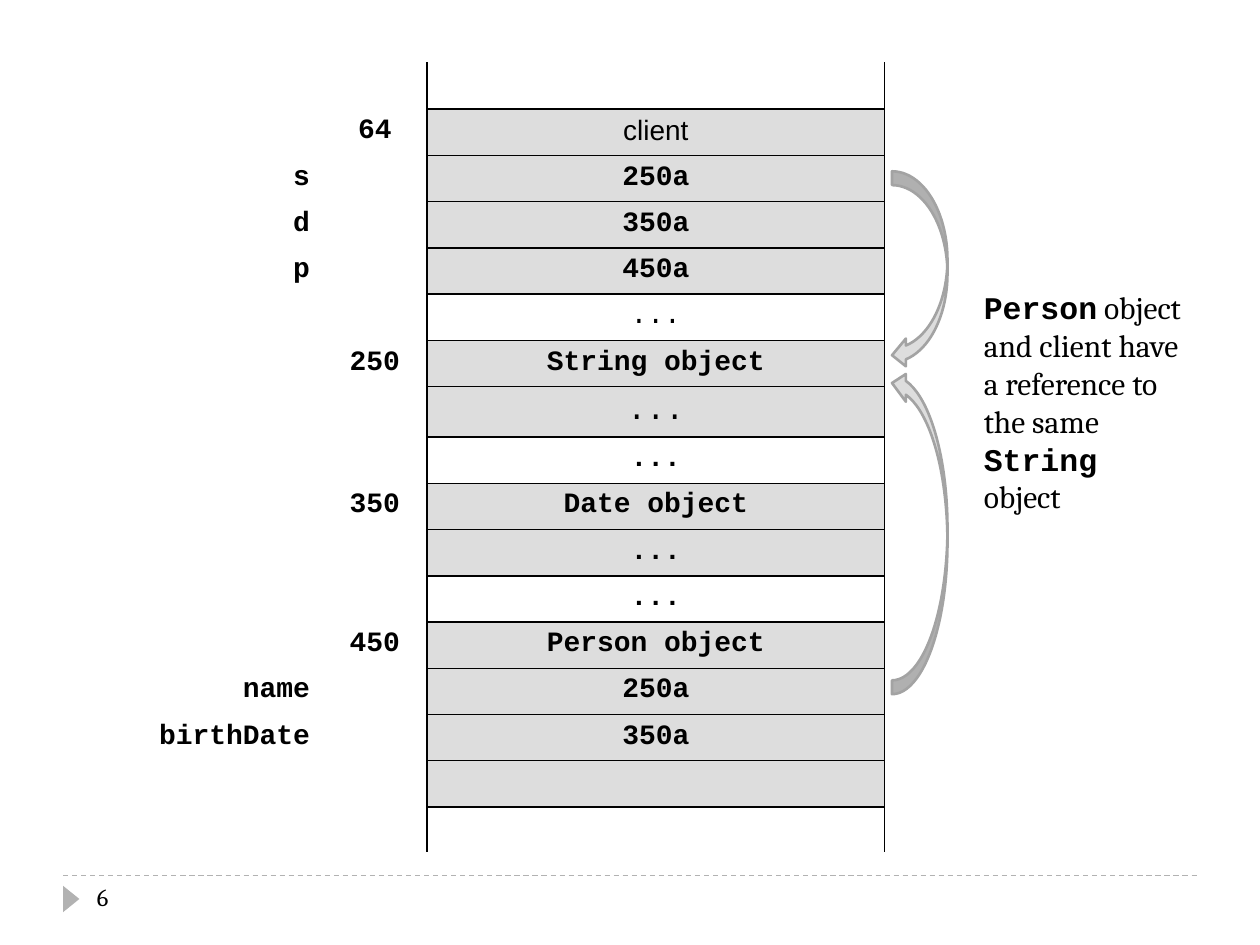
from pptx import Presentation
from pptx.dml.color import RGBColor
from pptx.enum.dml import MSO_LINE
from pptx.enum.shapes import MSO_CONNECTOR, MSO_SHAPE
from pptx.enum.text import MSO_AUTO_SIZE, PP_ALIGN
from pptx.oxml.ns import qn
from pptx.util import Inches, Pt
from lxml import etree

LEFT, MID, RIGHT = PP_ALIGN.LEFT, PP_ALIGN.CENTER, PP_ALIGN.RIGHT
DASH = MSO_LINE.DASH
GROW = MSO_AUTO_SIZE.SHAPE_TO_FIT_TEXT
STRAIGHT = MSO_CONNECTOR.STRAIGHT
TIP = MSO_SHAPE.ISOSCELES_TRIANGLE
CURVE = MSO_SHAPE.CURVED_LEFT_ARROW

HUES = {"ink": "000000", "cell": "DDDDDD", "edge": "A3A3A3", "rule": "B2B2B2"}
CODE, BODY, SANS = "Courier New", "Cambria", "Arial"
COLS = (2.28, 0.83, 3.63)
HIGH = 0.35

PLAIN = {"bold": False}
ROWS = [
    ("", "", "", False, {}),
    ("", "64", "client", True, {"face": SANS, "bold": False}),
    ("s", "", "250a", True, {}),
    ("d", "", "350a", True, {}),
    ("p", "", "450a", True, {}),
    ("", "", "...", False, PLAIN),
    ("", "250", "String object", True, {}),
    ("", "", "...", True, {"size": 18, "bold": False}),
    ("", "", "...", False, {}),
    ("", "350", "Date object", True, {}),
    ("", "", "...", True, {}),
    ("", "", "...", False, {}),
    ("", "450", "Person object", True, {}),
    ("name", "", "250a", True, {}),
    ("birthDate", "", "350a", True, {}),
    ("", "", "", True, {}),
    ("", "", "", False, {}),
]
NOTE = [
    [("Person", True), (" object", False)],
    [("and client have", False)],
    [("a reference to", False)],
    [("the same ", False), ("String", True)],
    [("object", False)],
]


def tint(name):
    return RGBColor.from_string(HUES[name])


def write(para, text, face=CODE, size=16, bold=True, align=LEFT):
    para.alignment = align
    if not text:
        para._p.get_or_add_endParaRPr().set("sz", str(size * 100))
        return
    run = para.add_run()
    run.text = text
    run.font.name = face
    run.font.size = Pt(size)
    run.font.bold = bold
    run.font.color.rgb = tint("ink")


class Page:
    def __init__(self, deck):
        self.shapes = deck.slides.add_slide(deck.slide_layouts[6]).shapes

    def rule(self, x1, x2, y):
        line = self.shapes.add_connector(
            STRAIGHT, Inches(x1), Inches(y), Inches(x2), Inches(y))
        line.line.color.rgb = tint("rule")
        line.line.width = Pt(0.75)
        line.line.dash_style = DASH
        etree.SubElement(line._element.spPr, qn("a:effectLst"))

    def shape(self, kind, box, fill, edge=None, turn=0, flip=False):
        item = self.shapes.add_shape(kind, *map(Inches, box))
        item.shadow.inherit = False
        item.fill.solid()
        item.fill.fore_color.rgb = tint(fill)
        if edge:
            item.line.color.rgb = tint(edge)
            item.line.width = Pt(1.5)
        else:
            item.line.fill.background()
        item.rotation = turn
        if flip:
            item._element.spPr.xfrm.set("flipV", "1")

    def text(self, box, lines, size):
        item = self.shapes.add_textbox(*map(Inches, box))
        frame = item.text_frame
        frame.word_wrap = True
        frame.auto_size = GROW
        for i, line in enumerate(lines):
            para = frame.add_paragraph() if i else frame.paragraphs[0]
            for words, code in line:
                write(para, words, face=CODE if code else BODY,
                      size=size, bold=code)

    def border(self, cell, sides):
        props = cell._tc.get_or_add_tcPr()
        for side in sides:
            line = etree.SubElement(props, qn("a:ln" + side), w=str(Pt(1)))
            fill = etree.SubElement(line, qn("a:solidFill"))
            etree.SubElement(fill, qn("a:srgbClr"), val=HUES["ink"])

    def table(self, x, y):
        grid = self.shapes.add_table(
            len(ROWS), len(COLS), Inches(x), Inches(y),
            Inches(sum(COLS)), Inches(HIGH * len(ROWS))).table
        grid.first_row = grid.horz_banding = False
        for col, wide in zip(grid.columns, COLS):
            col.width = Inches(wide)
        last = len(ROWS) - 1
        for r, (name, spot, value, shade, style) in enumerate(ROWS):
            grid.rows[r].height = Inches(HIGH)
            ends = {0: "LRB", last: "LRT"}.get(r, "LRTB")
            cells = ((name, RIGHT, "", {}), (spot, MID, "R", {}),
                     (value, MID, ends, style))
            for c, (words, align, sides, look) in enumerate(cells):
                cell = grid.cell(r, c)
                self.border(cell, sides)
                if shade and c == 2:
                    cell.fill.solid()
                    cell.fill.fore_color.rgb = tint("cell")
                else:
                    cell.fill.background()
                write(cell.text_frame.paragraphs[0], words, align=align, **look)


def main():
    deck = Presentation()
    deck.slide_width, deck.slide_height = Inches(10), Inches(7.5)
    page = Page(deck)
    page.rule(0.5, 9.5, 6.95)
    page.shape(TIP, (0.46, 7.07, 0.21, 0.13), "rule", turn=90)
    page.text((0.67, 6.95, 2.17, 0.4), [[("6", False)]], 14)
    page.table(0.28, 0.5)
    page.shape(CURVE, (7.08, 1.36, 0.44, 1.57), "cell", "edge")
    page.shape(CURVE, (7.08, 2.93, 0.44, 2.58), "cell", "edge", flip=True)
    page.text((7.71, 2.24, 2.06, 1.9), NOTE, 18)
    deck.save("out.pptx")


if __name__ == "__main__":
    main()
